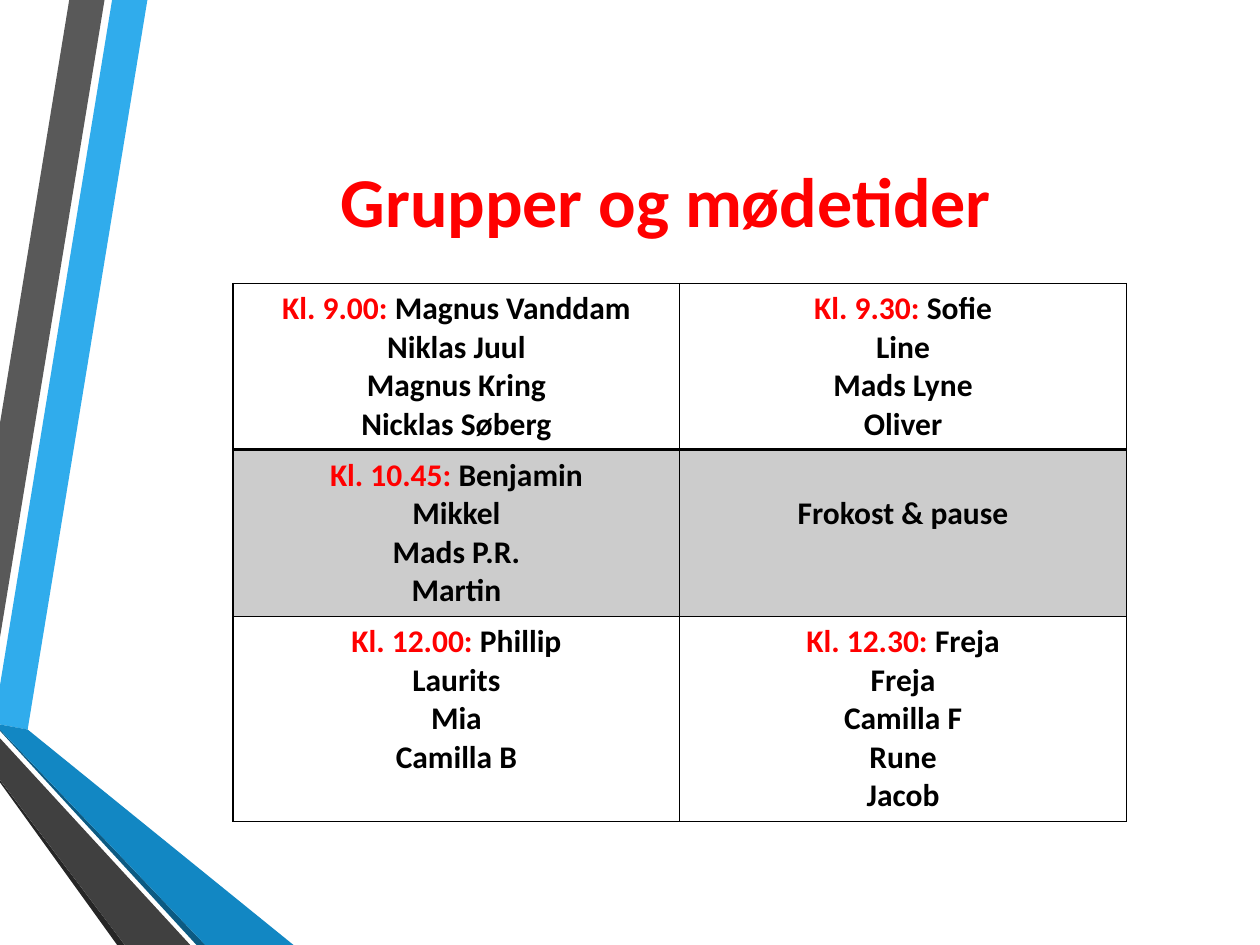
import dataclasses

import pptx
import pptx.dml.color
import pptx.enum.text
import pptx.oxml
import pptx.oxml.ns
import pptx.util

COLS, ROWS = 1000, 750  # slide grid; every length below is in grid steps
RGB = pptx.dml.color.RGBColor.from_string
CENTER = pptx.enum.text.PP_ALIGN.CENTER
MIDDLE = pptx.enum.text.MSO_ANCHOR.MIDDLE


@dataclasses.dataclass(frozen=True)
class Theme:
    font: str = "Calibri"
    title_size: int = 40
    body_size: int = 18
    accent: str = "FF0000"
    text: str = "000000"
    shade: str = "CCCCCC"
    thin: int = 1
    thick: int = 2


@dataclasses.dataclass(frozen=True)
class Box:
    left: float
    top: float
    width: float
    height: float


THEME = Theme()
STEP = pptx.util.Inches(10) // COLS

# Ribbon outlines, from back to front, relative to the ribbon box
RIBBONS = [
    ("30ACEC", [(0, 544), (0, 575), (22, 579), (117, 0), (89, 0)]),
    ("595959", [(83, 0), (55, 0), (0, 336), (0, 506)]),
    ("262626", [(0, 619), (0, 621), (93, 750), (99, 750)]),
    ("0C5A82", [(0, 579), (0, 580), (156, 750), (163, 750)]),
    ("1287C3", [(0, 579), (163, 750), (233, 750), (22, 579), (0, 575)]),
    ("404040", [(0, 619), (99, 750), (151, 750), (0, 586)]),
]

# Each cell: meeting time, then one name per line
GROUPS = [
    [("Kl. 9.00: ", ["Magnus Vanddam", "Niklas Juul", "Magnus Kring", "Nicklas Søberg"]),
     ("Kl. 9.30: ", ["Sofie", "Line", "Mads Lyne", "Oliver"])],
    [("Kl. 10.45: ", ["Benjamin", "Mikkel", "Mads P.R.", "Martin"]),
     ("", ["Frokost & pause"])],
    [("Kl. 12.00: ", ["Phillip", "Laurits", "Mia", "Camilla B"]),
     ("Kl. 12.30: ", ["Freja", "Freja", "Camilla F", "Rune", "Jacob"])],
]
ROW_HEIGHTS = [132, 132, 163]
BREAK_ROW = 1
LINE_HEIGHT = 30.5


def grid(n):
    return pptx.util.Emu(round(n * STEP))


def add_run(p, text, size, color):
    r = p.add_run()
    r.text = text
    r.font.name = THEME.font
    r.font.size = pptx.util.Pt(size)
    r.font.bold = True
    r.font.color.rgb = RGB(color)


def add_ribbons(s, box):
    for color, points in RIBBONS:
        placed = [(box.left + x, box.top + y) for x, y in points]
        builder = s.shapes.build_freeform(*placed[0], scale=STEP)
        builder.add_line_segments(placed[1:], close=True)
        sp = builder.convert_to_shape()
        sp.shadow.inherit = False
        sp.fill.solid()
        sp.fill.fore_color.rgb = RGB(color)
        sp.line.fill.background()


def add_title(s, box, text):
    sp = s.shapes.title
    sp.left, sp.top = grid(box.left), grid(box.top)
    sp.width, sp.height = grid(box.width), grid(box.height)
    tf = sp.text_frame
    tf.vertical_anchor = MIDDLE
    p = tf.paragraphs[0]
    p.alignment = CENTER
    add_run(p, text, THEME.title_size, THEME.accent)


def set_borders(cell, widths):
    tc_pr = cell._tc.get_or_add_tcPr()
    for side, width in zip("LRTB", widths):
        tc_pr.append(pptx.oxml.parse_xml(
            f'<a:ln{side} {pptx.oxml.ns.nsdecls("a")} w="{pptx.util.Pt(width)}">'
            f'<a:solidFill><a:srgbClr val="{THEME.text}"/></a:solidFill></a:ln{side}>'))


def fill_cell(cell, time, names):
    cell.margin_left = cell.margin_right = grid(9)
    cell.margin_top = cell.margin_bottom = grid(5)
    if not time:  # the break starts on the second line
        cell.margin_top = grid(5 + LINE_HEIGHT)
    tf = cell.text_frame
    for i, name in enumerate(names):
        p = tf.add_paragraph() if i else tf.paragraphs[0]
        p.alignment = CENTER
        if time and i == 0:
            add_run(p, time, THEME.body_size, THEME.accent)
        add_run(p, name, THEME.body_size, THEME.text)


def add_schedule(s, box, groups):
    table = s.shapes.add_table(len(groups), len(groups[0]), grid(box.left), grid(box.top),
                               grid(box.width), grid(box.height)).table
    table.first_row = table.horz_banding = False
    for i, row in enumerate(groups):
        table.rows[i].height = grid(ROW_HEIGHTS[i])
        top = THEME.thick if i == 1 else THEME.thin
        bottom = THEME.thick if i == 0 else THEME.thin
        for j, (time, names) in enumerate(row):
            cell = table.cell(i, j)
            fill_cell(cell, time, names)
            set_borders(cell, (THEME.thin, THEME.thin, top, bottom))
            if i == BREAK_ROW:
                cell.fill.solid()
                cell.fill.fore_color.rgb = RGB(THEME.shade)
            else:
                cell.fill.background()


def main():
    prs = pptx.Presentation()
    prs.slide_width, prs.slide_height = grid(COLS), grid(ROWS)
    s = prs.slides.add_slide(prs.slide_layouts[5])
    add_ribbons(s, Box(0, 0, 233, ROWS))
    add_title(s, Box(107, 50, 843, 217), "Grupper og mødetider")
    add_schedule(s, Box(185, 225, 709, sum(ROW_HEIGHTS)), GROUPS)
    prs.save("out.pptx")


if __name__ == "__main__":
    main()
